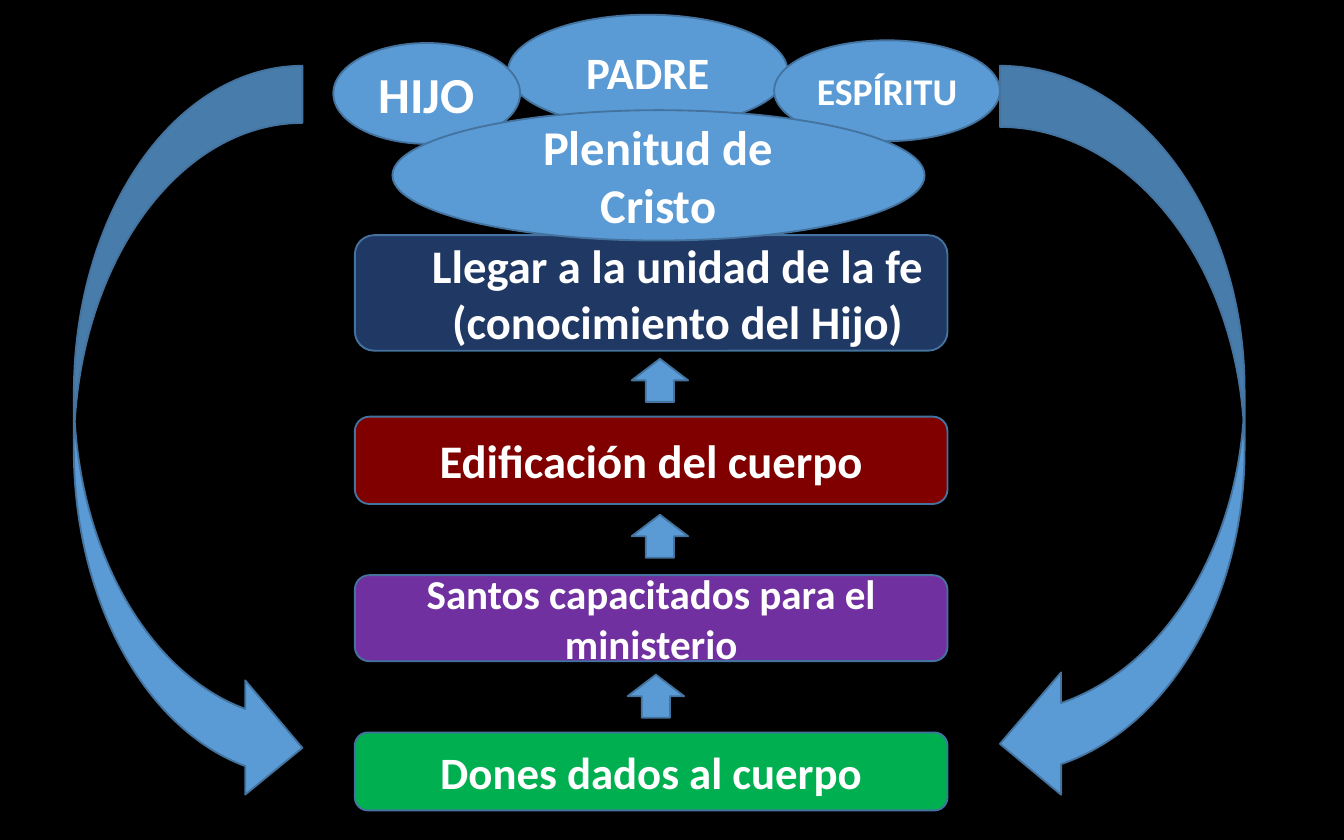
from pptx import Presentation, util as u
from pptx.dml.color import RGBColor
from pptx.enum import shapes, text

COLORS = {
    "black": "000000", "white": "FFFFFF", "blue": "5B9BD5", "edge": "43739E",
    "green": "00B050", "purple": "7030A0", "maroon": "800000", "navy": "203864",
}
WIDTH, HEIGHT = 10, 6.25
STEP_LEFT, STEP_WIDTH = 2.64, 4.41
ARROW_WIDTH, ARROW_HEIGHT = 0.42, 0.32
LOOP_TOP, LOOP_HEIGHT = 0.49, 5.5

# Content: label, font size, left, top, width, height
TRINITY = [
    ("PADRE", 24, 3.78, 0.11, 2.08, 0.84),
    ("HIJO", 27, 2.48, 0.32, 1.39, 0.75),
    ("ESPÍRITU", 20.2, 5.76, 0.3, 1.68, 0.75),
]
FULLNESS = ("Plenitud de Cristo", 26, 2.92, 0.82, 3.96, 0.97)

# Steps from the bottom up: label, font size, colour, top, height, indent
STEPS = [
    ("Dones dados al cuerpo", 24, "green", 5.45, 0.58, 0),
    ("Santos capacitados para el ministerio", 22, "purple", 4.28, 0.64, 0),
    ("Edificación del cuerpo", 25, "maroon", 3.1, 0.65, 0),
    ("Llegar a la unidad de la fe (conocimiento del Hijo)", 25, "navy", 1.75, 0.86, 0.39),
]
# Arrow left and its gap below the step above
RISES = [(4.67, 0.1), (4.7, 0.08), (4.7, 0.06)]
# Side loops: preset, left, width
LOOPS = [("CURVED_RIGHT_ARROW", 0.55, 1.7), ("CURVED_LEFT_ARROW", 7.44, 1.82)]


def color(name):
    return RGBColor.from_string(COLORS[name])


def write(shape, label, size, indent=0, font="Calibri", ink="white"):
    frame = shape.text_frame
    frame.word_wrap = True
    frame.vertical_anchor = text.MSO_ANCHOR.MIDDLE
    frame.margin_left = frame.margin_right = u.Inches(0.07)
    frame.margin_top = frame.margin_bottom = u.Inches(0.03)
    line = frame.paragraphs[0]
    line.alignment = text.PP_ALIGN.CENTER
    if indent:
        line.level = 1
        props = line._p.get_or_add_pPr()
        props.set("marL", str(u.Inches(indent)))
        props.set("indent", "0")
    run = line.add_run()
    run.text = label
    run.font.name, run.font.size, run.font.bold = font, u.Pt(size), True
    run.font.color.rgb = color(ink)


def draw(preset, left, top, width, height, fill="blue"):
    kind = getattr(shapes.MSO_SHAPE, preset)
    shape = slide.shapes.add_shape(kind, *map(u.Inches, (left, top, width, height)))
    shape.shadow.inherit = False
    shape.fill.solid()
    shape.fill.fore_color.rgb = color(fill)
    shape.line.color.rgb = color("edge")
    shape.line.width = u.Pt(1)
    return shape


deck = Presentation()
deck.slide_width, deck.slide_height = u.Inches(WIDTH), u.Inches(HEIGHT)
slide = deck.slides.add_slide(deck.slide_layouts[6])
slide.background.fill.solid()
slide.background.fill.fore_color.rgb = color("black")

# Trinity at the top
for label, size, *place in TRINITY:
    write(draw("OVAL", *place), label, size)

# Side loops from top to bottom
for preset, left, width in LOOPS:
    draw(preset, left, LOOP_TOP, width, LOOP_HEIGHT)

# Rising steps
for label, size, fill, top, height, indent in STEPS:
    step = draw("ROUNDED_RECTANGLE", STEP_LEFT, top, STEP_WIDTH, height, fill)
    write(step, label, size, indent)

# Fullness overlaps the top step
label, size, *place = FULLNESS
write(draw("OVAL", *place), label, size)

# Arrows between steps
for (left, gap), (*_, top, height, indent) in zip(RISES, STEPS[1:]):
    draw("UP_ARROW", left, top + height + gap, ARROW_WIDTH, ARROW_HEIGHT)

deck.save("out.pptx")
